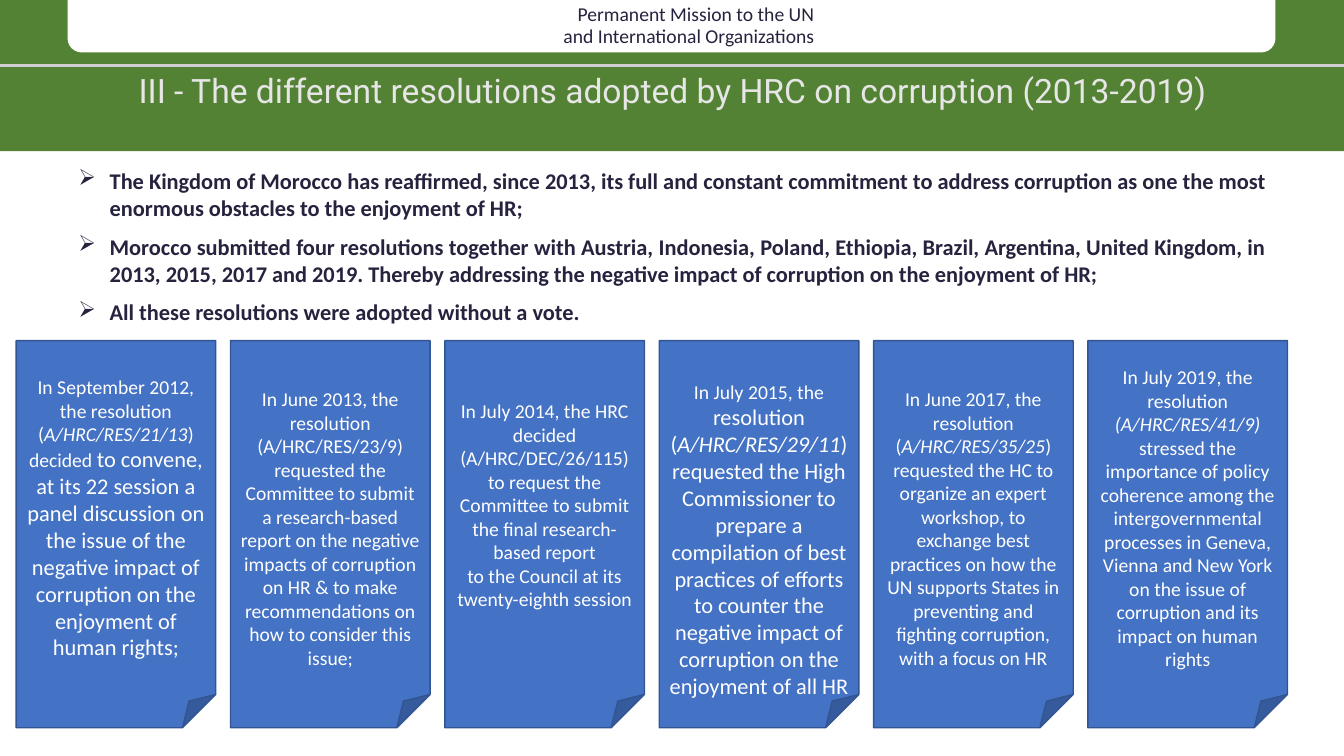
from pptx import Presentation
from pptx.dml.color import RGBColor
from pptx.enum import shapes, text
from pptx.oxml import ns
from pptx.util import Inches, Pt
from lxml import etree

GREEN = RGBColor(0x54, 0x82, 0x35)
WHITE = RGBColor(0xFF, 0xFF, 0xFF)
INK = RGBColor(0x26, 0x23, 0x3E)
RULE_GREY = RGBColor(0xD0, 0xCE, 0xCE)
TITLE_GREY = RGBColor(0xE7, 0xE6, 0xE6)
CARD_BLUE = RGBColor(0x44, 0x72, 0xC4)
CARD_EDGE = RGBColor(0x32, 0x54, 0x91)

SLIDE_WIDTH, SLIDE_HEIGHT = 13.33, 7.5
SHAPE = shapes.MSO_SHAPE
CENTER, JUSTIFY = text.PP_ALIGN.CENTER, text.PP_ALIGN.JUSTIFY

TITLE = "III - The different resolutions adopted by HRC on corruption (2013-2019)"
POINTS = [
    "The Kingdom of Morocco has reaffirmed, since 2013, its full and constant commitment "
    "to address corruption as one the most enormous obstacles to the enjoyment of HR;",
    "Morocco submitted four resolutions together with Austria, Indonesia, Poland, Ethiopia, "
    "Brazil, Argentina, United Kingdom, in 2013, 2015, 2017 and 2019. Thereby addressing "
    "the negative impact of corruption on the enjoyment of HR;",
    "All these resolutions were adopted without a vote.",
]

# Each card: space above its text, then paragraphs of (text, size, italic) runs
CARDS = [
    (0.34, [[("In September 2012, the resolution (", 14, False),
             ("A/HRC/RES/21/13", 14, True),
             (") decided ", 14, False),
             ("to convene, at its 22 session a panel discussion on the issue of the "
              "negative impact of corruption on the enjoyment of human rights;", 16, False)]]),
    (0.46, [[("In June 2013, the resolution (A/HRC/RES/23/9) requested the Committee to "
              "submit a research-based report on the negative impacts of corruption on HR "
              "& to make recommendations on how to consider this issue;", 14, False)]]),
    (0.58, [[("In July 2014, the HRC decided (A/HRC/DEC/26/115) to request the Committee "
              "to submit the final research-based report", 14, False)],
            [("to the Council at its twenty-eighth session", 14, False)]]),
    (0.39, [[("In July 2015, the ", 14, False),
             ("resolution (", 16, False),
             ("A/HRC/RES/29/11", 16, True),
             (") requested the High Commissioner to prepare a compilation of best practices "
              "of efforts to counter the negative impact of corruption on the enjoyment of "
              "all HR", 16, False)]]),
    (0.46, [[("In June 2017, the resolution (", 14, False),
             ("A/HRC/RES/35/25", 14, True),
             (") requested the HC to organize an expert workshop, to exchange best practices "
              "on how the UN supports States in preventing and fighting corruption, with a "
              "focus on HR", 14, False)]]),
    (0.24, [[("In July 2019, the resolution ", 14, False),
             ("(A/HRC/RES/41/9) ", 14, True),
             ("stressed the importance of policy coherence among the intergovernmental "
              "processes in Geneva, Vienna and New York on the issue of corruption and its "
              "impact on human rights", 14, False)]]),
]


def add_panel(slide, kind, left, top, width, height, fill, edge=None):
    shape = slide.shapes.add_shape(
        kind, Inches(left), Inches(top), Inches(width), Inches(height))
    shape.shadow.inherit = False
    shape.fill.solid()
    shape.fill.fore_color.rgb = fill
    if edge is None:
        shape.line.fill.background()
    else:
        shape.line.color.rgb = edge
        shape.line.width = Pt(1)
    return shape


def add_text_frame(slide, left, top, width, height, wrap=True):
    box = slide.shapes.add_textbox(
        Inches(left), Inches(top), Inches(width), Inches(height))
    box.text_frame.word_wrap = wrap
    return box.text_frame


def add_run(paragraph, words, size, color, name="Calibri", bold=False, italic=False):
    run = paragraph.add_run()
    run.text = words
    values = {"size": Pt(size), "name": name, "bold": bold, "italic": italic}
    for attribute, value in values.items():
        setattr(run.font, attribute, value)
    run.font.color.rgb = color


def next_paragraph(frame, index):
    return frame.add_paragraph() if index else frame.paragraphs[0]


def add_header(slide, width, height):
    # Green band and the white tab hanging from its top edge
    add_panel(slide, SHAPE.RECTANGLE, 0, 0, width, height, GREEN)
    tab = add_panel(slide, SHAPE.ROUND_2_SAME_RECTANGLE, 0.67, 0, width - 1.35, 0.52, WHITE)
    tab.adjustments[0], tab.adjustments[1] = 0, 0.27

    # Name of the mission
    for words, left, top in [("Permanent Mission to the UN", 5.63, -0.03),
                             ("and International Organizations", 5.49, 0.19)]:
        frame = add_text_frame(slide, left, top, 8.21 - left, 0.34, wrap=False)
        add_run(frame.paragraphs[0], words, 14, INK)

    # Thin rule across the band
    rule = slide.shapes.add_connector(
        shapes.MSO_CONNECTOR.STRAIGHT, 0, Inches(0.65), Inches(width), Inches(0.65))
    rule.line.color.rgb = RULE_GREY
    rule.line.width = Pt(1.5)
    etree.SubElement(rule._element.spPr, ns.qn("a:effectLst"))

    # Title
    frame = add_text_frame(slide, 0.68, 0.74, width - 1.35, 0.67)
    for side in ("left", "top", "right", "bottom"):
        setattr(frame, f"margin_{side}", 0)
    paragraph = frame.paragraphs[0]
    paragraph.alignment = CENTER
    paragraph.line_spacing = 0.9
    add_run(paragraph, TITLE, 24, TITLE_GREY, name="Roboto")


def add_points(slide, left, top, width, height):
    frame = add_text_frame(slide, left, top, width, height)
    indent = Inches(0.31)
    for index, words in enumerate(POINTS):
        paragraph = next_paragraph(frame, index)
        paragraph.alignment = JUSTIFY
        if index:
            paragraph.space_before = Pt(8.5)
        properties = paragraph._p.get_or_add_pPr()
        properties.set("marL", str(indent))
        properties.set("indent", str(-indent))
        bullet = etree.SubElement(properties, ns.qn("a:buChar"))
        bullet.set("char", "➢")
        add_run(paragraph, words, 16, INK, bold=True)


def add_card(slide, left, top, width, height, space_above, paragraphs):
    card = add_panel(slide, SHAPE.FOLDED_CORNER, left, top, width, height,
                     CARD_BLUE, CARD_EDGE)
    frame = card.text_frame
    frame.word_wrap = True
    frame.vertical_anchor = text.MSO_ANCHOR.TOP
    frame.margin_top = Inches(space_above)
    for index, runs in enumerate(paragraphs):
        paragraph = next_paragraph(frame, index)
        paragraph.alignment = CENTER
        for words, size, italic in runs:
            add_run(paragraph, words, size, WHITE, italic=italic)


def add_card_row(slide, left, top, width, height):
    card_width = 1.98
    pitch = (width - card_width) / (len(CARDS) - 1)
    for index, (space_above, paragraphs) in enumerate(CARDS):
        add_card(slide, left + index * pitch, top, card_width, height,
                 space_above, paragraphs)


def main():
    presentation = Presentation()
    presentation.slide_width = Inches(SLIDE_WIDTH)
    presentation.slide_height = Inches(SLIDE_HEIGHT)
    slide = presentation.slides.add_slide(presentation.slide_layouts[6])
    add_header(slide, SLIDE_WIDTH, 1.5)
    add_points(slide, 0.68, 1.61, 11.98, 1.72)
    add_card_row(slide, 0.16, 3.38, 12.61, 3.84)
    presentation.save("out.pptx")


if __name__ == "__main__":
    main()
